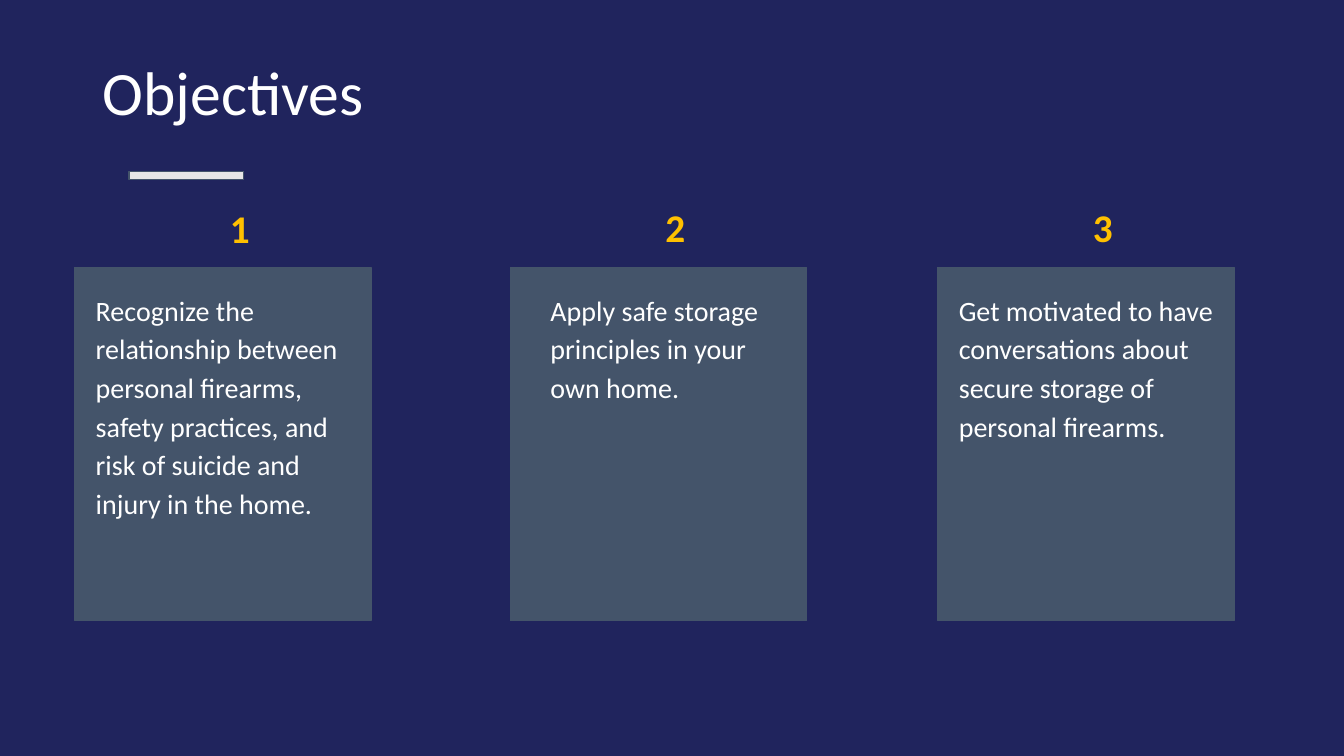
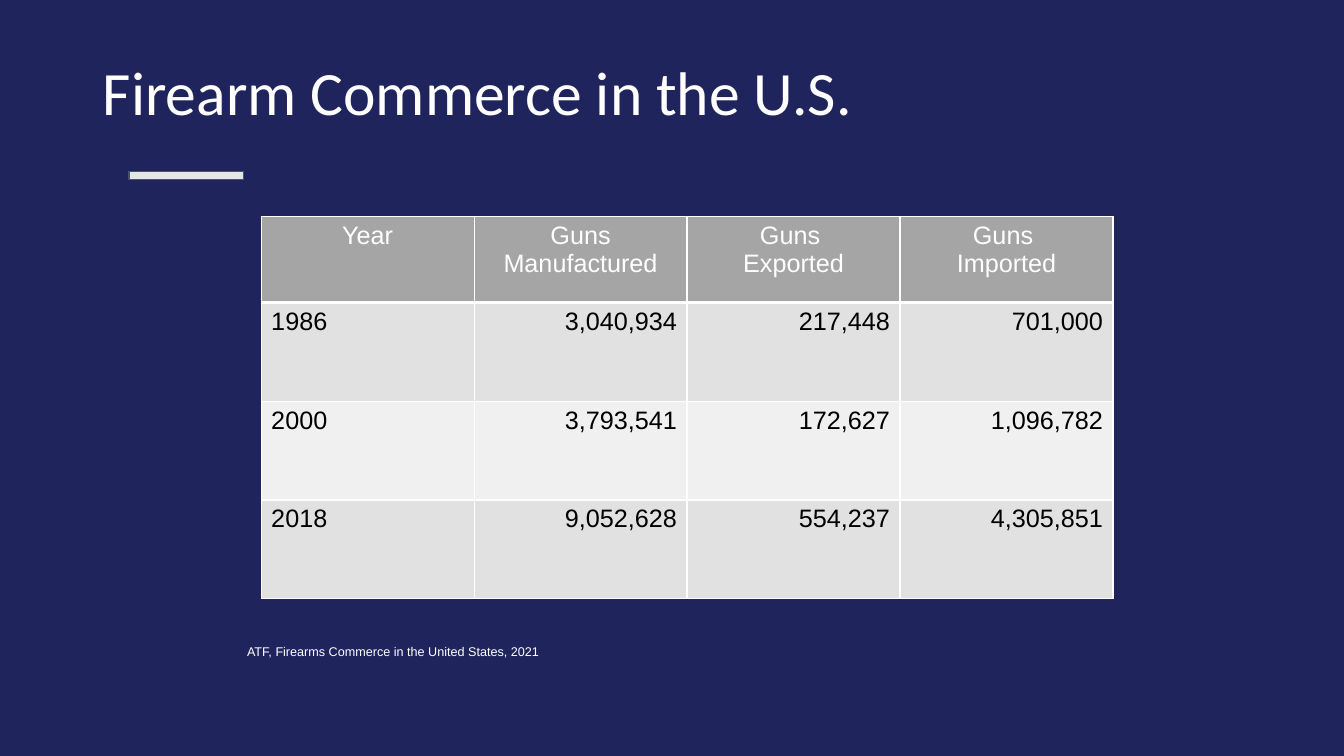
from lxml import etree
from pptx import Presentation
from pptx.dml.color import RGBColor
from pptx.enum import shapes, text
from pptx.oxml import ns
from pptx.util import Inches, Pt

NAVY, SLATE, PALE, GOLD = "20245D", "44546A", "E7E6E6", "FFC000"
WHITE, BLACK, GRAY = "FFFFFF", "000000", "A5A5A5"
BANDS = ["E1E1E1", "F0F0F0"]

OBJECTIVES = [
    (0.74, 0.21, 0.21, "Recognize the relationship between personal firearms, "
     "safety practices, and risk of suicide and injury in the home."),
    (5.06, 0.4, 0.28, "Apply safe storage principles in your own home."),
    (9.3, 0.21, 0.1, "Get motivated to have conversations about secure storage "
     "of personal firearms."),
]
COMMERCE = [
    ["Year", "Guns Manufactured", "Guns \nExported", "Guns \nImported"],
    ["1986", "3,040,934", "217,448", "701,000"],
    ["2000", "3,793,541", "172,627", "1,096,782"],
    ["2018", "9,052,628", "554,237", "4,305,851"],
]


def rgb(color):
    return RGBColor.from_string(color)


def place(sp, left, top, width, height):
    sp.left, sp.top = Inches(left), Inches(top)
    sp.width, sp.height = Inches(width), Inches(height)


def write(tf, words, size, color, font="Calibri", bold=False, spacing=1.0,
          align=text.PP_ALIGN.LEFT):
    tf.text = words
    tf.word_wrap = True
    for p in tf.paragraphs:
        p.alignment = align
        p.line_spacing = spacing
        p.space_before = Pt(0)
        for r in p.runs:
            r.font.name, r.font.size, r.font.bold = font, Pt(size), bold
            r.font.color.rgb = rgb(color)


def clear_bullet(p):
    pPr = p._p.get_or_add_pPr()
    pPr.set("marL", "0")
    pPr.set("indent", "0")
    etree.SubElement(pPr, ns.qn("a:buNone"))


def write_body(s, box, words, **style):
    sp = s.placeholders[1]
    place(sp, *box)
    tf = sp.text_frame
    write(tf, words, **style)
    tf.auto_size = text.MSO_AUTO_SIZE.NONE
    for p in tf.paragraphs:
        clear_bullet(p)


def add_box(s, left, top, width, height, fill):
    sp = s.shapes.add_shape(shapes.MSO_SHAPE.RECTANGLE, Inches(left),
                            Inches(top), Inches(width), Inches(height))
    sp.shadow.inherit = False
    sp.fill.solid()
    sp.fill.fore_color.rgb = rgb(fill)
    sp.line.color.rgb = rgb(SLATE)
    sp.line.width = Pt(0.75)
    return sp


def style_layout(prs, layout):
    fill = prs.slide_master.background.fill
    fill.solid()
    fill.fore_color.rgb = rgb(NAVY)
    place(layout.placeholders[0], 0.92, 0.4, 11.5, 1.1)


def add_slide(prs, layout, title):
    s = prs.slides.add_slide(layout)
    tf = s.shapes.title.text_frame
    write(tf, title, 44, WHITE, spacing=0.9)
    tf.vertical_anchor = text.MSO_ANCHOR.MIDDLE
    tf.auto_size = text.MSO_AUTO_SIZE.NONE
    add_box(s, 1.28, 1.7, 1.14, 0.08, PALE)
    return s


def add_card(s, left, top, inset_left, inset_right, words):
    tf = add_box(s, left, top, 2.94, 3.51, SLATE).text_frame
    write(tf, words, 20, WHITE, spacing=1.15)
    tf.vertical_anchor = text.MSO_ANCHOR.TOP
    tf.margin_left, tf.margin_right = Inches(inset_left), Inches(inset_right)
    tf.margin_top = Inches(0.21)


def add_number(s, left, top, number):
    box = (left + 1.44, top - 0.55, 0.44, 0.39)
    style = dict(size=28, color=GOLD, bold=True, spacing=0.7)
    if number == 1:
        write_body(s, box, str(number), **style)
    else:
        sp = s.shapes.add_textbox(*map(Inches, box))
        write(sp.text_frame, str(number), **style)


def set_borders(cell, bottom):
    tcPr = cell._tc.get_or_add_tcPr()
    widths = {"lnL": 1, "lnR": 1, "lnT": 1, "lnB": bottom}
    for i, (tag, width) in enumerate(widths.items()):
        ln = etree.Element(ns.qn("a:" + tag), w=str(Pt(width)))
        fill = etree.SubElement(ln, ns.qn("a:solidFill"))
        etree.SubElement(fill, ns.qn("a:srgbClr"), val=WHITE)
        tcPr.insert(i, ln)


def add_commerce_table(s, left, top, width, rows):
    head, body = 0.85, 0.98
    height = head + body * (len(rows) - 1)
    table = s.shapes.add_table(len(rows), len(rows[0]), Inches(left), Inches(top),
                               Inches(width), Inches(height)).table
    for i, row in enumerate(rows):
        table.rows[i].height = Inches(body if i else head)
        for j, words in enumerate(row):
            cell = table.cell(i, j)
            if i == 0:
                align = text.PP_ALIGN.CENTER
            else:
                align = text.PP_ALIGN.RIGHT if j else text.PP_ALIGN.LEFT
            write(cell.text_frame, words, 18, BLACK if i else WHITE, "Arial",
                  align=align)
            cell.fill.solid()
            cell.fill.fore_color.rgb = rgb(BANDS[(i - 1) % 2] if i else GRAY)
            set_borders(cell, 1 if i else 3)


def objectives_slide(prs, layout):
    s = add_slide(prs, layout, "Objectives")
    top = 2.65
    for number, (left, inset_left, inset_right, words) in enumerate(OBJECTIVES, 1):
        add_card(s, left, top, inset_left, inset_right, words)
        add_number(s, left, top, number)


def commerce_slide(prs, layout):
    s = add_slide(prs, layout, "Firearm Commerce in the U.S.")
    write_body(s, (2.35, 6.35, 3.82, 0.47),
               "ATF, Firearms Commerce in the United States, 2021",
               size=9, color=WHITE, font="Arial", spacing=0.9)
    add_commerce_table(s, 2.59, 2.15, 8.45, COMMERCE)


def main():
    prs = Presentation()
    prs.slide_width, prs.slide_height = Inches(13.33), Inches(7.5)
    layout = prs.slide_layouts[1]
    style_layout(prs, layout)
    objectives_slide(prs, layout)
    commerce_slide(prs, layout)
    prs.save("out.pptx")


if __name__ == "__main__":
    main()
